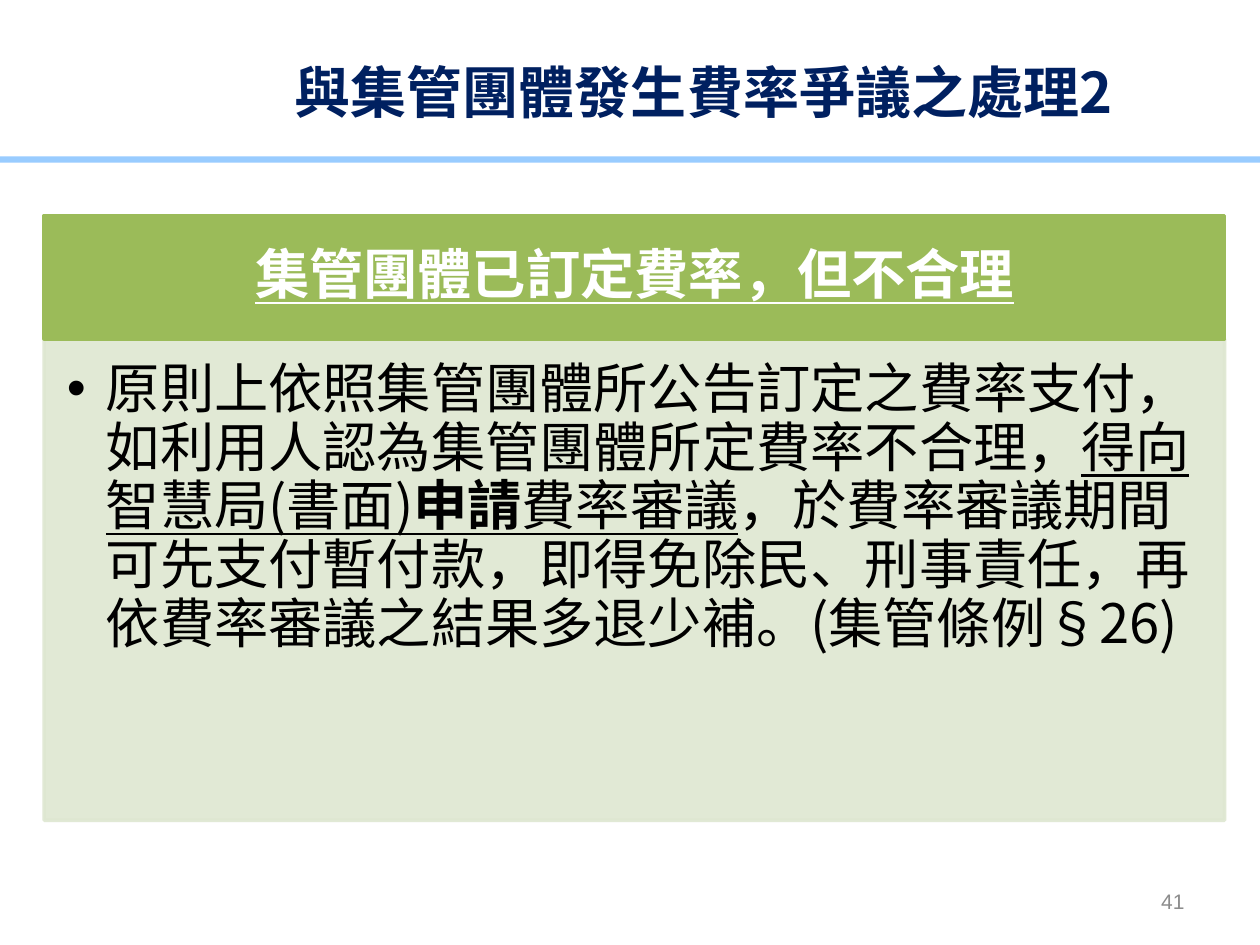
from lxml.etree import SubElement
from pptx import Presentation
from pptx.dml.color import RGBColor
from pptx.enum.shapes import MSO_SHAPE as Shape
from pptx.enum.text import MSO_ANCHOR as Anchor, MSO_AUTO_SIZE as AutoSize, PP_ALIGN as Align
from pptx.oxml.ns import qn
from pptx.util import Inches, Pt

NAVY = RGBColor(0x00, 0x20, 0x60)
SKY = RGBColor(0x99, 0xCC, 0xFF)
GREEN = RGBColor(0x9B, 0xBB, 0x59)
PALE = RGBColor(0xDE, 0xE7, 0xD1)
WHITE = RGBColor(0xFF, 0xFF, 0xFF)
BLACK = RGBColor(0x00, 0x00, 0x00)
GRAY = RGBColor(0x8C, 0x8C, 0x8C)
CJK, LATIN = "Noto Sans CJK SC", "Arial"

# Content: runs are (text, bold, underline)
TITLE = [("與集管團體發生費率爭議之處理2", True, False)]
HEADING = [("集管團體已訂定費率，但不合理", True, True)]
BODY = [
    ("原則上依照集管團體所公告訂定之費率支付，如利用人認為集管團體所定費率不合理，", False, False),
    ("得向智慧局(書面)", False, True),
    ("申請", True, True),
    ("費率審議", False, True),
    ("，於費率審議期間可先支付暫付款，即得免除民、刑事責任，"
     "再依費率審議之結果多退少補。(集管條例§26)", False, False),
]
PAGE_NUMBER = [("41", False, False)]

# Layout in inches
PANEL_LEFT, PANEL_TOP, PANEL_WIDTH = 0.35, 1.71, 9.37
HEADING_HEIGHT, BODY_HEIGHT = 0.98, 3.82


def place(shape, left, top, width, height):
    shape.left, shape.top = Inches(left), Inches(top)
    shape.width, shape.height = Inches(width), Inches(height)


def paint(shape, color, alpha=None):
    """Fill and outline a shape in one colour, alpha in percent."""
    shape.fill.solid()
    shape.fill.fore_color.rgb = color
    shape.line.color.rgb = color
    shape.line.width = Pt(2)
    if alpha:
        for node in shape._element.spPr.iter(qn("a:srgbClr")):
            SubElement(node, qn("a:alpha"), val=str(alpha * 1000))


def write(shape, runs, size, color, align, anchor, insets=(0.1, 0.05, 0.1, 0.05),
          font=CJK, spacing=1.0):
    frame = shape.text_frame
    frame.word_wrap = True
    frame.auto_size = AutoSize.NONE
    frame.vertical_anchor = anchor
    (frame.margin_left, frame.margin_top,
     frame.margin_right, frame.margin_bottom) = map(Inches, insets)
    para = frame.paragraphs[0]
    para.alignment = align
    para.line_spacing = spacing
    para.space_before = Pt(0)
    for text, bold, underline in runs:
        span = para.add_run()
        span.text = text
        span.font.size = Pt(size)
        span.font.name = font
        span.font.bold = bold
        span.font.underline = underline
        span.font.color.rgb = color
        SubElement(span._r.rPr, qn("a:ea"), typeface=font)
    return para


def add_bar(page, left, top, width, height):
    bar = page.shapes.add_shape(Shape.RECTANGLE, Inches(left), Inches(top),
                                Inches(width), Inches(height))
    bar.shadow.inherit = False
    return bar


def main():
    deck = Presentation()
    deck.slide_width, deck.slide_height = Inches(10), Inches(7.5)
    page = deck.slides.add_slide(deck.slide_layouts[1])
    title, body = page.shapes.title, page.placeholders[1]

    # Title and the rule below it
    place(title, 2.24, 0.21, 7.56, 1.02)
    write(title, TITLE, 32, NAVY, Align.LEFT, Anchor.MIDDLE)
    rule = add_bar(page, -0.04, 1.24, 10.06, 0.05)
    rule.fill.solid()
    rule.fill.fore_color.rgb = SKY
    rule.line.fill.background()

    # Panel heading
    heading = add_bar(page, PANEL_LEFT, PANEL_TOP, PANEL_WIDTH, HEADING_HEIGHT)
    paint(heading, GREEN)
    write(heading, HEADING, 31, WHITE, Align.CENTER, Anchor.MIDDLE,
          (0.24, 0.14, 0.24, 0.14), spacing=0.9)

    # Panel body with one bullet
    place(body, PANEL_LEFT, PANEL_TOP + HEADING_HEIGHT, PANEL_WIDTH, BODY_HEIGHT)
    paint(body, PALE, alpha=90)
    para = write(body, BODY, 31, BLACK, Align.LEFT, Anchor.TOP,
                 (0.18, 0.18, 0.24, 0.27), spacing=0.9)
    settings = para._p.get_or_add_pPr()
    settings.set("marL", str(Inches(0.31)))
    settings.set("indent", str(-Inches(0.31)))
    SubElement(settings, qn("a:buChar"), char="•")

    # Page number
    number = page.shapes.add_textbox(Inches(7.17), Inches(6.95), Inches(2.33), Inches(0.4))
    write(number, PAGE_NUMBER, 12, GRAY, Align.RIGHT, Anchor.MIDDLE, font=LATIN)

    deck.save("out.pptx")


if __name__ == "__main__":
    main()
